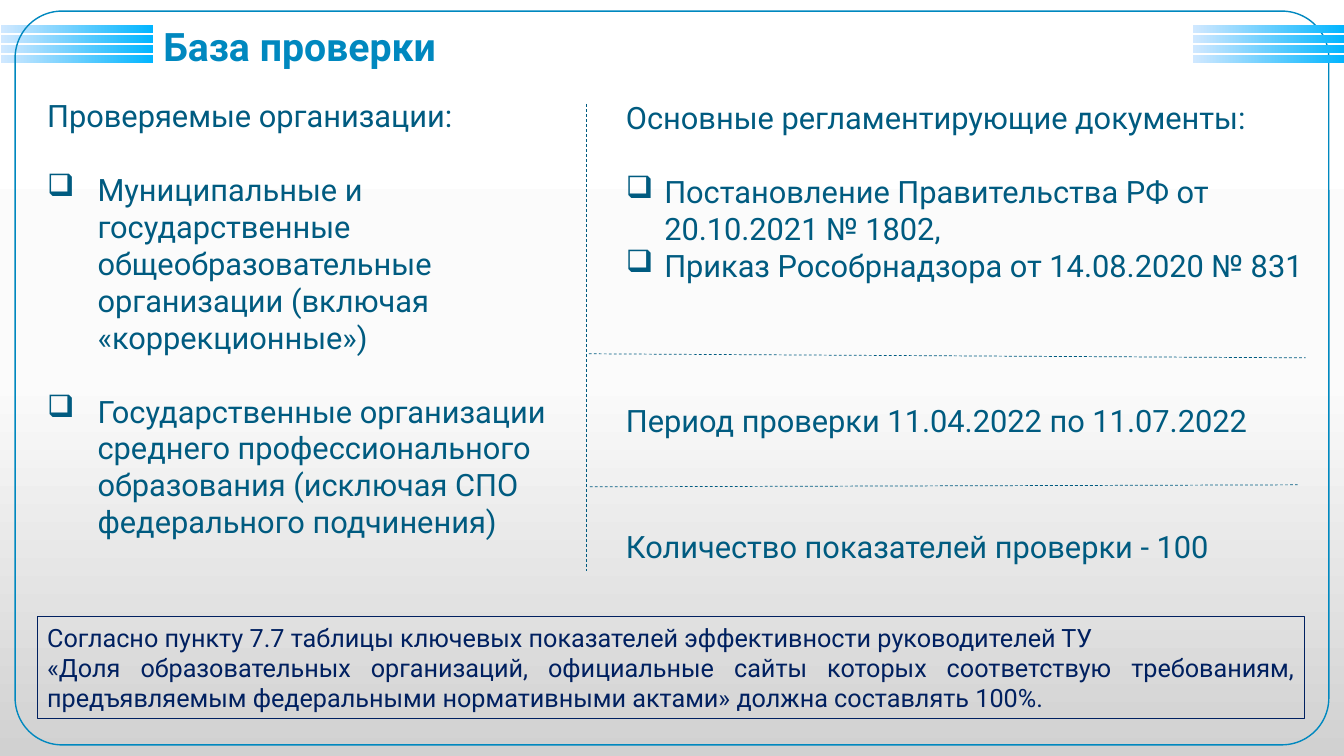
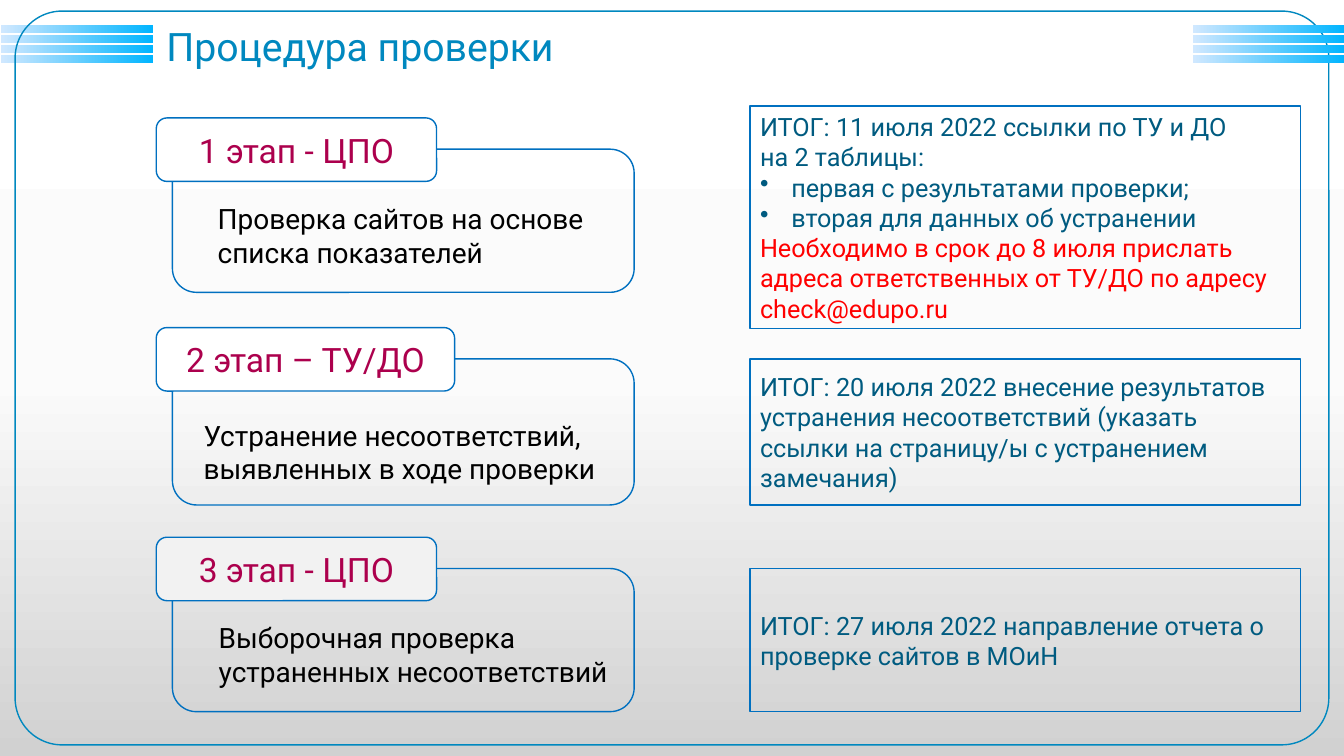
import copy
from dataclasses import dataclass

import pptx
import pptx.dml.color
import pptx.enum.dml
import pptx.enum.shapes
import pptx.enum.text
import pptx.oxml.ns
import pptx.util
from lxml import etree

Inches = pptx.util.Inches
Pt = pptx.util.Pt
Shape = pptx.enum.shapes.MSO_SHAPE
Align = pptx.enum.text.PP_ALIGN
Anchor = pptx.enum.text.MSO_ANCHOR

FONT = "Roboto"
COLORS = {
    "title": "0088BF",
    "text": "005B80",
    "navy": "002060",
    "outline": "0070C0",
    "stage": "AC004D",
    "alert": "FF0000",
    "black": "000000",
    "white": "FFFFFF",
    "pale": "F2F2F2",
    "middle": "FBFBFB",
    "gray": "D1D1D1",
    "bar_light": "D1E8FF",
    "bar_bright": "00B5FF",
}


@dataclass
class Line:
    """A paragraph that differs from the plain style of its text."""
    text: str
    bullet: str = ""
    indent: float = 0
    gap: float = 0
    color: str = ""


def rgb(name):
    return pptx.dml.color.RGBColor.from_string(COLORS[name])


def fill_gradient(fill, names, angle):
    """Spread the named colours evenly; angle is counter-clockwise."""
    fill.gradient()
    fill.gradient_angle = angle
    stop_list = next(fill._xPr.iter(pptx.oxml.ns.qn("a:gsLst")))
    while len(stop_list) < len(names):
        stop_list.append(copy.deepcopy(stop_list[-1]))
    for index, (stop, name) in enumerate(zip(fill.gradient_stops, names)):
        stop.position = index / (len(names) - 1)
        stop.color.rgb = rgb(name)


def set_bullet(paragraph, character, indent):
    properties = paragraph._p.get_or_add_pPr()
    properties.set("marL", str(Inches(indent)))
    properties.set("indent", str(-Inches(indent)))
    bullet = etree.SubElement(properties, pptx.oxml.ns.qn("a:buChar"))
    bullet.set("char", character)


def write_text(frame, lines, size=18, color="text", bold=False,
               align=Align.LEFT, anchor=Anchor.TOP, spacing=1.0):
    frame.word_wrap = True
    frame.auto_size = pptx.enum.text.MSO_AUTO_SIZE.NONE
    frame.vertical_anchor = anchor
    for index, line in enumerate(lines):
        if isinstance(line, str):
            line = Line(line)
        paragraph = frame.add_paragraph() if index else frame.paragraphs[0]
        paragraph.alignment = align
        paragraph.line_spacing = spacing
        paragraph.space_before = Pt(line.gap)
        if line.bullet:
            set_bullet(paragraph, line.bullet, line.indent)
        run = paragraph.add_run()
        run.text = line.text
        run.font.name = FONT
        run.font.size = Pt(size)
        run.font.bold = bold
        run.font.color.rgb = rgb(line.color or color)


class Deck:
    def __init__(self):
        self.presentation = pptx.Presentation()
        self.presentation.slide_width = Inches(13.33)
        self.presentation.slide_height = Inches(7.5)
        fill_gradient(self.presentation.slide_master.background.fill,
                      ["white", "middle", "gray"], 270)
        self.slide = None

    def add_slide(self, title, left=1.52, bold=False):
        layout = self.presentation.slide_layouts[5]
        self.slide = self.presentation.slides.add_slide(layout)
        placeholder = self.slide.shapes.title
        placeholder.left, placeholder.top = Inches(left), Inches(0.25)
        placeholder.width, placeholder.height = Inches(6.43), Inches(0.47)
        write_text(placeholder.text_frame, [title], size=28, color="title",
                   bold=bold, anchor=Anchor.MIDDLE, spacing=0.9)
        self.bars(0.01)
        self.box(0.15, 0.11, 13.03, 7.28, line="title", radius=0.064)
        self.bars(11.83)

    def bars(self, left):
        for row in range(4):
            bar = self.box(left, 0.25 + row * 0.097, 1.51, 0.08, line=None)
            fill_gradient(bar.fill, ["bar_light", "bar_bright"], 0)

    def box(self, left, top, width, height, fill=None, line="outline",
            line_width=1, radius=0):
        """Add a rectangle, rounded when a radius is given."""
        kind = Shape.ROUNDED_RECTANGLE if radius else Shape.RECTANGLE
        shape = self.slide.shapes.add_shape(
            kind, Inches(left), Inches(top), Inches(width), Inches(height))
        shape.shadow.inherit = False
        if radius:
            shape.adjustments[0] = radius
        if fill:
            shape.fill.solid()
            shape.fill.fore_color.rgb = rgb(fill)
        else:
            shape.fill.background()
        if line:
            shape.line.color.rgb = rgb(line)
            shape.line.width = Pt(line_width)
        else:
            shape.line.fill.background()
        return shape

    def text(self, left, top, width, height, lines, **style):
        text_box = self.slide.shapes.add_textbox(
            Inches(left), Inches(top), Inches(width), Inches(height))
        write_text(text_box.text_frame, lines, **style)

    def dashed_line(self, x1, y1, x2, y2):
        connector = self.slide.shapes.add_connector(
            pptx.enum.shapes.MSO_CONNECTOR.STRAIGHT,
            Inches(x1), Inches(y1), Inches(x2), Inches(y2))
        connector.line.color.rgb = rgb("text")
        connector.line.width = Pt(0.5)
        connector.line.dash_style = pptx.enum.dml.MSO_LINE.DASH
        etree.SubElement(connector._element.spPr,
                         pptx.oxml.ns.qn("a:effectLst"))

    def stage(self, top, height, name, tag_width, tag_fill, note, note_at):
        """Add a stage: rounded body, description and overlapping tag."""
        self.box(1.71, top, 4.58, height, radius=0.167)
        self.text(*note_at, 4.22, 0.77, [note], size=20, color="black")
        tag = self.box(1.55, top - 0.31, tag_width, 0.63, fill=tag_fill,
                       radius=0.167)
        write_text(tag.text_frame, [name], size=24, color="stage",
                   align=Align.CENTER, anchor=Anchor.MIDDLE)

    def result(self, top, height, lines):
        shape = self.box(7.44, top, 5.46, height)
        write_text(shape.text_frame, lines, anchor=Anchor.MIDDLE)


def build_basis(deck):
    deck.add_slide("База проверки", bold=True)
    blank_line = 26.4
    organizations = [
        "Проверяемые организации:",
        Line("Муниципальные и государственные общеобразовательные организации "
             "(включая «коррекционные»)", "❑", 0.5, blank_line),
        Line("Государственные организации среднего профессионального "
             "образования (исключая СПО федерального подчинения)",
             "❑", 0.5, blank_line),
    ]
    documents = [
        "Основные регламентирующие документы:",
        Line("Постановление Правительства РФ от 20.10.2021 № 1802,",
             "❑", 0.38, blank_line),
        Line("Приказ Рособрнадзора от 14.08.2020 № 831", "❑", 0.38),
    ]
    deck.text(0.37, 0.91, 5.3, 4.54, organizations, size=22)
    deck.text(6.11, 0.93, 7.11, 1.95, documents, size=22)
    deck.text(6.11, 3.94, 7.02, 0.47,
              ["Период проверки 11.04.2022 по 11.07.2022"], size=22)
    deck.text(6.11, 5.19, 6.78, 0.47,
              ["Количество показателей проверки - 100"], size=22)
    deck.dashed_line(5.82, 1.03, 5.82, 5.66)
    deck.dashed_line(5.84, 3.51, 12.95, 3.55)
    deck.dashed_line(5.85, 4.83, 12.87, 4.81)
    requirement = deck.box(0.37, 6.12, 12.57, 1.01, line="navy",
                           line_width=0.75)
    write_text(requirement.text_frame, [
        "Согласно пункту 7.7 таблицы ключевых показателей эффективности "
        "руководителей ТУ",
        "«Доля образовательных организаций, официальные сайты которых "
        "соответствую требованиям, предъявляемым федеральными нормативными "
        "актами» должна составлять 100%.",
    ], color="navy", align=Align.JUSTIFY)


def build_procedure(deck):
    deck.add_slide("Процедура проверки", left=1.55)
    first_top, pitch = 1.48, 2.08
    second_top, third_top = first_top + pitch, first_top + 2 * pitch
    deck.stage(first_top, 1.42, "1 этап - ЦПО", 2.78, "white",
               "Проверка сайтов на основе списка показателей", (2.06, 1.95))
    deck.stage(second_top, 1.45, "2 этап – ТУ/ДО", 2.96, "white",
               "Устранение несоответствий, выявленных в ходе проверки",
               (1.92, 4.1))
    deck.stage(third_top, 1.42, "3 этап - ЦПО", 2.78, "pale",
               "Выборочная проверка устраненных несоответствий", (2.07, 6.11))
    deck.result(1.05, 2.21, [
        "ИТОГ: 11 июля 2022 ссылки по ТУ и ДО",
        "на 2 таблицы:",
        Line("первая с результатами проверки;", "•", 0.31),
        Line("вторая для данных об устранении", "•", 0.31),
        Line("Необходимо в срок до 8 июля прислать адреса ответственных от "
             "ТУ/ДО по адресу check@edupo.ru", color="alert"),
    ])
    deck.result(second_top, 1.45, [
        "ИТОГ: 20 июля 2022 внесение результатов устранения несоответствий "
        "(указать ссылки на страницу/ы с устранением замечания)"])
    deck.result(third_top, 1.42, [
        "ИТОГ: 27 июля 2022 направление отчета о проверке сайтов в МОиН"])


def main():
    deck = Deck()
    build_basis(deck)
    build_procedure(deck)
    deck.presentation.save("out.pptx")


if __name__ == "__main__":
    main()
